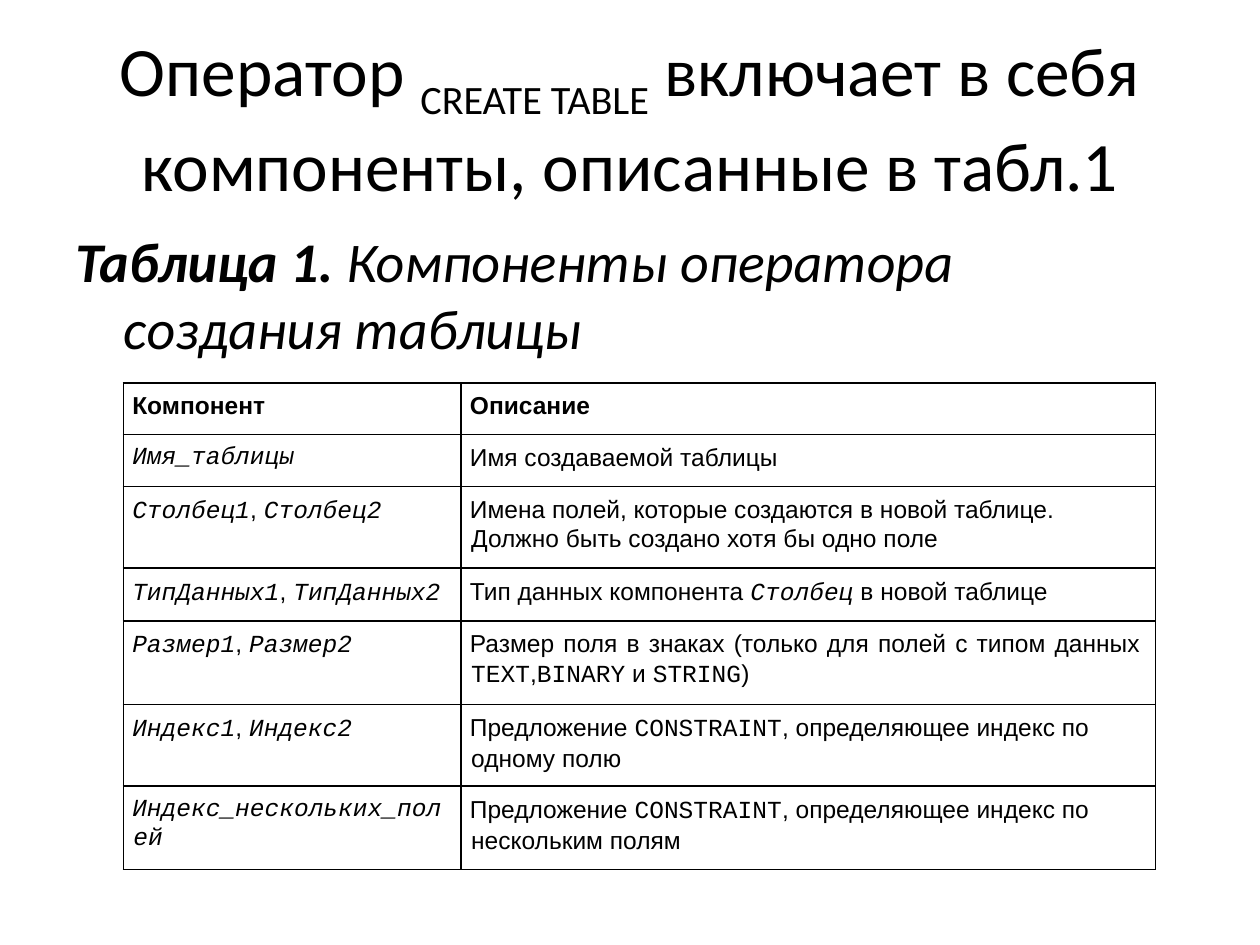
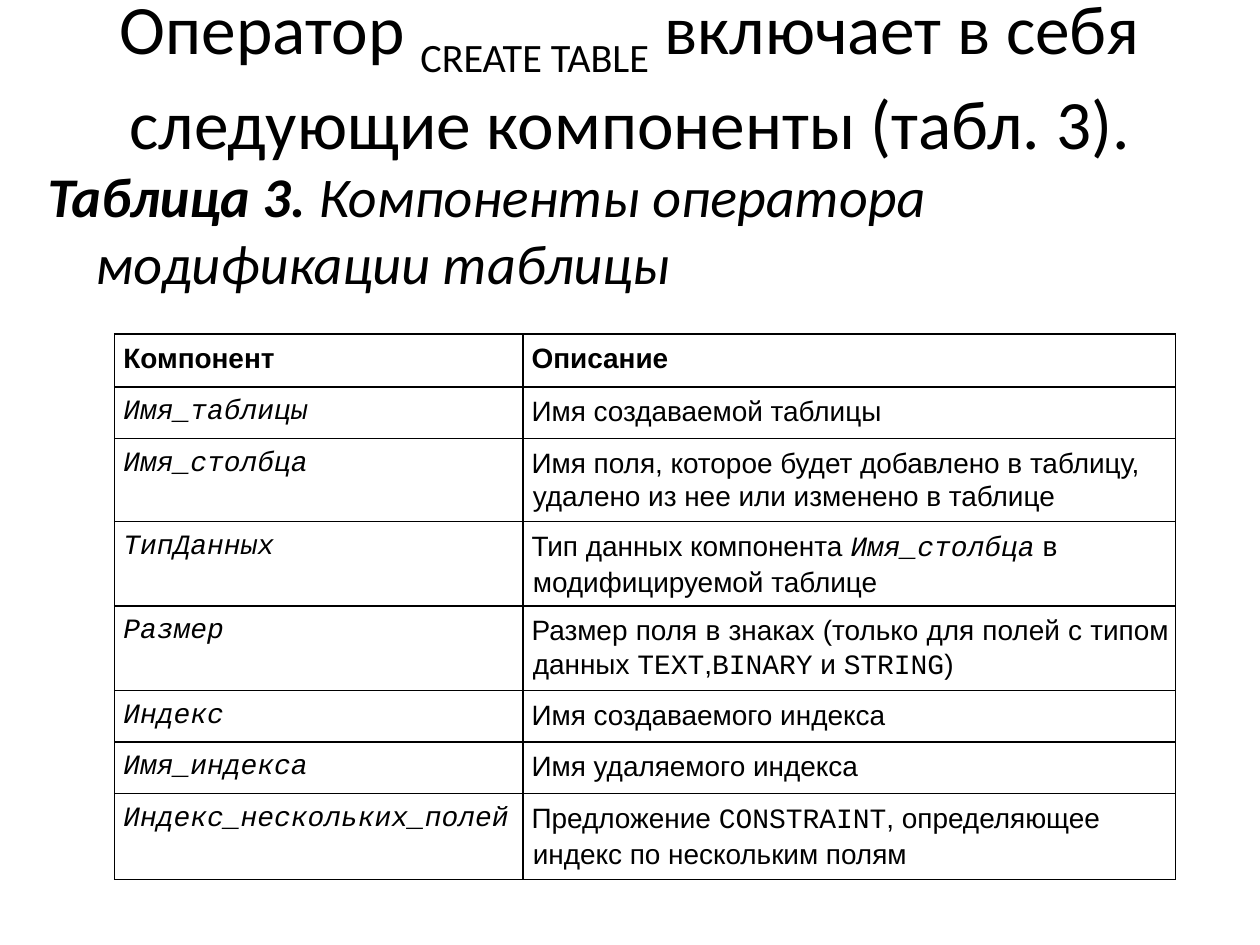
from dataclasses import dataclass

from lxml import etree
from pptx import Presentation
from pptx.dml.color import RGBColor
from pptx.enum.text import MSO_ANCHOR, PP_ALIGN
from pptx.oxml.ns import qn
from pptx.util import Inches, Pt

CENTER, JUSTIFY, LEFT = PP_ALIGN.CENTER, PP_ALIGN.JUSTIFY, PP_ALIGN.LEFT
MIDDLE = MSO_ANCHOR.MIDDLE


@dataclass(frozen=True)
class Theme:
    ink: str = "000000"
    heading_font: str = "Calibri"
    table_font: str = "Arial"
    code_font: str = "Courier New"
    title_size: float = 39.6
    caption_size: float = 32
    border_width: float = 1
    line_spacing: float = 1.07


THEME = Theme()
HEADER = ("Компонент", "Описание")
TABLE_NAME = ("*Имя_таблицы*", "Имя создаваемой таблицы")
SIZE_TEXT = "Размер поля в знаках (только для полей с типом данных `TEXT`,`BINARY` и `STRING`)"
MULTI_INDEX = (
    "*Индекс_нескольких_полей*",
    "Предложение `CONSTRAINT`, определяющее индекс по нескольким полям",
)

CREATE_ROWS = [
    HEADER,
    TABLE_NAME,
    ("*Столбец1*, *Столбец2*",
     "Имена полей, которые создаются в новой таблице. Должно быть создано хотя бы одно поле"),
    ("*ТипДанных1*, *ТипДанных2*", "Тип данных компонента *Столбец* в новой таблице"),
    ("*Размер1*, *Размер2*", SIZE_TEXT),
    ("*Индекс1*, *Индекс2*", "Предложение `CONSTRAINT`, определяющее индекс по одному полю"),
    MULTI_INDEX,
]

ALTER_ROWS = [
    HEADER,
    TABLE_NAME,
    ("*Имя_столбца*",
     "Имя поля, которое будет добавлено в таблицу, удалено из нее или изменено в таблице"),
    ("*ТипДанных*", "Тип данных компонента *Имя_столбца* в модифицируемой таблице"),
    ("*Размер*", SIZE_TEXT),
    ("*Индекс*", "Имя создаваемого индекса"),
    ("*Имя_индекса*", "Имя удаляемого индекса"),
    MULTI_INDEX,
]


def style_paragraph(para, size, font, align=LEFT, hanging=0):
    para.alignment = align
    para.font.size = Pt(size)
    para.font.name = font
    para.font.color.rgb = RGBColor.from_string(THEME.ink)
    if hanging:
        properties = para._p.get_or_add_pPr()
        properties.set("marL", str(Inches(hanging)))
        properties.set("indent", str(-Inches(hanging)))


def add_span(para, text):
    span = para.add_run()
    span.text = text
    return span


def add_text_box(page, left, top, width, height):
    frame = page.shapes.add_textbox(
        Inches(left), Inches(top), Inches(width), Inches(height)).text_frame
    frame.word_wrap = True
    return frame


def add_title(page, ending, bottom_inset=0.05):
    frame = add_text_box(page, 0.5, 0.3, 9, 1.25)
    frame.vertical_anchor = MIDDLE
    frame.margin_bottom = Inches(bottom_inset)
    para = frame.paragraphs[0]
    style_paragraph(para, THEME.title_size, THEME.heading_font, CENTER)
    add_span(para, "Оператор ")
    statement = add_span(para, "CREATE TABLE")
    statement.font._element.set("baseline", "-25000")
    add_span(para, " включает в себя " + ending)


def add_caption(page, left, top, height, label, text):
    para = add_text_box(page, left, top, 9, height).paragraphs[0]
    style_paragraph(para, THEME.caption_size, THEME.heading_font, hanging=0.38)
    para.font.italic = True
    para.space_before = Pt(THEME.caption_size * 0.2)
    add_span(para, label).font.bold = True
    add_span(para, " " + text)


def add_marked_text(para, text):
    for position, part in enumerate(text.split("*")):
        is_name = position % 2 == 1
        for index, piece in enumerate(part.split("`")):
            if piece:
                span = add_span(para, piece)
                is_code = is_name or index % 2 == 1
                span.font.name = THEME.code_font if is_code else THEME.table_font
                span.font.italic = is_name


def add_borders(cell):
    properties = cell._tc.get_or_add_tcPr()
    for position, side in enumerate(("lnL", "lnR", "lnT", "lnB")):
        line = etree.Element(qn(f"a:{side}"), w=str(Pt(THEME.border_width)))
        fill = etree.SubElement(line, qn("a:solidFill"))
        etree.SubElement(fill, qn("a:srgbClr"), val=THEME.ink)
        properties.insert(position, line)


def fill_cell(cell, text, size, right_inset, is_header):
    cell.margin_left, cell.margin_top = Inches(0.07), Inches(0.06)
    cell.margin_right, cell.margin_bottom = Inches(right_inset), 0
    cell.fill.background()
    add_borders(cell)
    para = cell.text_frame.paragraphs[0]
    align = JUSTIFY if text == SIZE_TEXT else LEFT
    style_paragraph(para, size, THEME.table_font, align, hanging=0.01)
    para.line_spacing = THEME.line_spacing
    para.font.bold = is_header
    add_marked_text(para, text)


def add_component_table(page, left, top, widths, heights, rows, size, right_inset):
    table = page.shapes.add_table(
        len(rows), len(widths), Inches(left), Inches(top),
        Inches(sum(widths)), Inches(sum(heights))).table
    table.first_row = table.horz_banding = False
    for column, width in zip(table.columns, widths):
        column.width = Inches(width)
    for row_number, (row, height, texts) in enumerate(zip(table.rows, heights, rows)):
        row.height = Inches(height)
        for cell, text in zip(row.cells, texts):
            fill_cell(cell, text, size, right_inset, row_number == 0)


def main():
    deck = Presentation()
    deck.slide_width, deck.slide_height = Inches(10), Inches(7.5)
    blank = deck.slide_layouts[6]

    page = deck.slides.add_slide(blank)
    add_title(page, "компоненты, описанные в табл.1")
    add_caption(page, 0.5, 1.75, 1.13, "Таблица 1.", "Компоненты оператора создания таблицы")
    add_component_table(page, 0.98, 3.04, (2.68, 5.51),
                        (0.41, 0.41, 0.65, 0.42, 0.66, 0.65, 0.66),
                        CREATE_ROWS, size=14, right_inset=0.12)

    page = deck.slides.add_slide(blank)
    add_title(page, "следующие компоненты (табл. 3).", bottom_inset=0.72)
    add_caption(page, 0.28, 1.23, 1.21, "Таблица 3.", "Компоненты оператора модификации таблицы")
    add_component_table(page, 0.91, 2.65, (3.24, 5.18),
                        (0.42, 0.41, 0.66, 0.67, 0.67, 0.41, 0.41, 0.68),
                        ALTER_ROWS, size=16, right_inset=0.05)

    deck.save("out.pptx")


if __name__ == "__main__":
    main()
